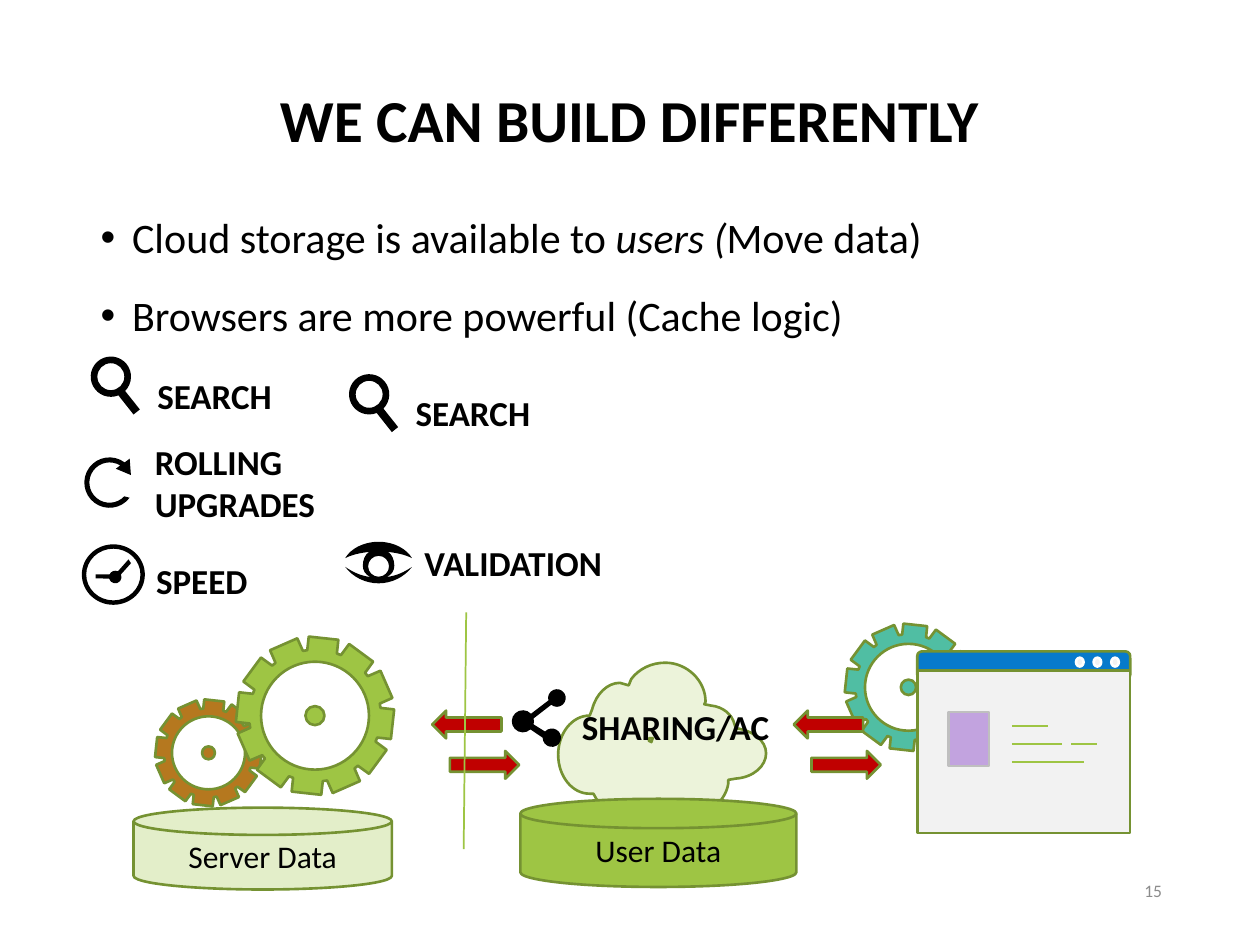
from math import ceil, cos, radians, sin, tan

from lxml import etree
from pptx import Presentation
from pptx import util as u
from pptx.dml.color import RGBColor
from pptx.enum import shapes, text
from pptx.oxml.ns import qn

BLACK = RGBColor(0, 0, 0)
WHITE = RGBColor(255, 255, 255)
GRAY = RGBColor(0x8C, 0x8C, 0x8C)
SILVER = RGBColor(0xBF, 0xBF, 0xBF)
PALE = RGBColor(0xF2, 0xF2, 0xF2)
MOSS = RGBColor(0x75, 0x92, 0x32)
LIME = RGBColor(0x9E, 0xC5, 0x44)
MINT = RGBColor(0xD8, 0xE8, 0xB4)
MIST = RGBColor(0xEC, 0xF3, 0xDA)
TEAL = RGBColor(0x50, 0xBE, 0xA3)
RUST = RGBColor(0xB5, 0x78, 0x1F)
RED = RGBColor(0xC0, 0, 0)
BLUE = RGBColor(0x07, 0x7A, 0xCC)
LILAC = RGBColor(0xC2, 0xA3, 0xDF)

KIND = shapes.MSO_SHAPE
MID = text.MSO_ANCHOR.MIDDLE
MID_X = text.PP_ALIGN.CENTER
COLS, ROWS = 100, 75
WIDE, HIGH = u.Inches(10), u.Inches(7.5)
LABEL = {"size": u.Pt(20), "bold": True}


def col(n):
    """Turn grid columns into a length."""
    return round(n * WIDE / COLS)


def row(n):
    """Turn grid rows into a length."""
    return round(n * HIGH / ROWS)


def cells(x, y, w, h):
    """Turn a grid box into four lengths."""
    return col(x), row(y), col(w), row(h)


def style(item, form):
    """Set each format value on an item."""
    for name, value in form.items():
        setattr(item, name, value)


def paint(shape, fill, line=MOSS):
    """Fill and outline a shape without a shadow."""
    shape.shadow.inherit = False
    shape.fill.solid()
    shape.fill.fore_color.rgb = fill
    if line is None:
        shape.line.fill.background()
    else:
        shape.line.color.rgb = line
        shape.line.width = u.Pt(1.5)
    return shape


def block(slide, kind, box, fill, line=MOSS):
    """Add a preset shape in a grid box."""
    return paint(slide.shapes.add_shape(kind, *cells(*box)), fill, line)


def rule(slide, x1, y1, x2, y2):
    """Draw a thin lime line."""
    line = slide.shapes.add_connector(
        shapes.MSO_CONNECTOR.STRAIGHT, col(x1), row(y1), col(x2), row(y2))
    line.line.color.rgb = LIME
    line.line.width = u.Pt(1)
    etree.SubElement(line.element.spPr, qn("a:effectLst"))


def write(para, words, form, color=BLACK):
    """Add a run of text to a paragraph."""
    run = para.add_run()
    run.text = words
    style(run.font, {"name": "Calibri"} | form)
    run.font.color.rgb = color


def note(slide, box, words, form, color=BLACK, frame=None, para=None):
    """Add a text box with one paragraph."""
    body = slide.shapes.add_textbox(*cells(*box)).text_frame
    style(body, {"word_wrap": True} | (frame or {}))
    style(body.paragraphs[0], para or {})
    write(body.paragraphs[0], words, form, color)


def arc(cx, cy, rx, ry=None, start=0, end=360):
    """Give an arc as a point and curves, in degrees clockwise from the right."""
    ry = rx if ry is None else ry
    count = ceil(abs(end - start) / 90)
    step = radians((end - start) / count)
    pull = 4 / 3 * tan(step / 4)
    parts = [(cx + rx * cos(radians(start)), cy + ry * sin(radians(start)))]
    for i in range(count):
        a = radians(start) + i * step
        b = a + step
        unit = (cos(a) - pull * sin(a), sin(a) + pull * cos(a),
                cos(b) + pull * sin(b), sin(b) - pull * cos(b), cos(b), sin(b))
        parts.append(tuple((cy + ry * n) if k % 2 else (cx + rx * n)
                           for k, n in enumerate(unit)))
    return parts


def flat(parts):
    """List every point of lines (pairs) and cubic curves (sixes)."""
    return [p[k:k + 2] for p in parts for k in range(0, len(p), 2)]


def outline(slide, x, y, loops, fill=BLACK, line=None):
    """Build one freeform from closed loops offset to x, y."""
    pens = [[(col(x + a), row(y + b)) for a, b in flat(loop)] for loop in loops]
    form = slide.shapes.build_freeform(*pens[0][0], scale=1.0)
    form.add_line_segments(pens[0][1:], close=True)
    for pen in pens[1:]:
        form.move_to(*pen[0])
        form.add_line_segments(pen[1:], close=True)
    shape = form.convert_to_shape()
    legs = iter(list(shape.element.iter(qn("a:lnTo"))))
    for part in (p for loop in loops for p in loop[1:]):
        trio = [next(legs) for _ in range(len(part) // 2)]
        if len(trio) == 3:
            bend = etree.Element(qn("a:cubicBezTo"))
            trio[0].addprevious(bend)
            for leg in trio:
                bend.append(leg[0])
                leg.getparent().remove(leg)
    return paint(shape, fill, line)


def gear(slide, cx, cy, size, fill):
    """Draw a twelve-tooth gear and its hub about a centre."""
    rim = []
    for tooth in range(12):
        mid = tooth * 30 - 83.7
        for turn, far in ((-13.1, .83), (-10.8, 1), (10.8, 1), (13.1, .83)):
            t = radians(mid + turn)
            rim.append((size * far * cos(t), size * far * sin(t)))
    outline(slide, cx, cy, [rim, arc(0, 0, size * .68)], fill, MOSS)
    hub = size * .12
    block(slide, KIND.OVAL, (cx - hub, cy - hub, 2 * hub, 2 * hub), fill)


def cloud(slide, x, y):
    """Draw the cloud behind the user data."""
    puff = [
        (0, 7.3), (0, 5.6, 1.1, 4.2, 2.5, 4.2), (2.7, 3.7),
        (3, 2.5, 3.9, 1.6, 4.9, 1.6), (5.6, 1.8),
        (5.8, 1.3), (6.4, .5, 7.4, 0, 8.5, 0),
        (10.2, 0, 11.7, 1.4, 11.7, 3.1), (11.6, 3.3), (12.1, 3.4),
        (13.1, 3.5, 13.8, 4.1, 14, 4.9), (14.1, 5.2),
        (15.5, 5.4, 16.5, 6.2, 16.5, 7.2), (16.5, 8.2, 15.5, 9.1, 14.1, 9.2),
        (13.5, 9.3), (13.5, 9.6), (13.3, 10.9, 12.1, 12, 10.8, 12),
        (10.3, 12, 9.7, 11.8, 9.3, 11.4), (9, 11.2), (8.8, 11.4),
        (8.1, 12, 7.2, 12.3, 6.2, 12.3), (4.6, 12.3, 3.3, 11.5, 2.8, 10.4),
        (2.5, 10.4), (1.1, 10.4, 0, 9, 0, 7.3)]
    speck = [(7.2, 6.2), (7.4, 6.3), (7.5, 6), (7.2, 6)]
    outline(slide, x, y, [speck, puff], MIST, MOSS)


def disk(slide, box, words, fill, alpha=100):
    """Draw a labelled data store."""
    shape = block(slide, KIND.FLOWCHART_MAGNETIC_DISK, box, fill)
    if alpha < 100:
        tint = shape.element.spPr.find(".//" + qn("a:srgbClr"))
        etree.SubElement(tint, qn("a:alpha"), val=str(alpha * 1000))
    body = shape.text_frame
    body.vertical_anchor = MID
    body.paragraphs[0].alignment = MID_X
    write(body.paragraphs[0], words, {"size": u.Pt(18)})


def swap(slide, x, y):
    """Draw a left arrow above a right arrow."""
    for dx, dy, turn in ((0, 0, 180), (1.4, 3.2, 0)):
        block(slide, KIND.RIGHT_ARROW, (x + dx, y + dy, 5.5, 2.2), RED).rotation = turn


def window(slide, x, y):
    """Draw the browser window."""
    block(slide, KIND.ROUNDED_RECTANGLE, (x, y, 16.9, 2.2), BLUE)
    block(slide, KIND.RECTANGLE, (x, y + 1.5, 16.9, 12.9), PALE)
    for i in range(3):
        block(slide, KIND.OVAL, (x + 12.6 + 1.4 * i, y + .5, .6, .7), PALE, WHITE)
    block(slide, KIND.FLOWCHART_PROCESS, (x + 2.5, y + 4.8, 3.2, 4.3), LILAC, SILVER)
    for a, b, dy in ((7.5, 10.4, 5.9), (7.5, 11.5, 7.35), (7.5, 13.2, 8.8), (12.2, 14.3, 7.35)):
        rule(slide, x + a, y + dy, x + b, y + dy)


def icon(slide, x, y, words, box, loops):
    """Draw a black icon with its label box beside it."""
    dx, dy, w, h = box
    note(slide, (x + dx, y + dy, w, h), words, LABEL)
    outline(slide, x, y, loops)


def search(slide, x, y):
    """Draw the magnifier and its label."""
    glass = arc(1.6, 1.6, 1.6, start=68, end=405) + [(3.9, 4.2), (3.4, 4.6)]
    icon(slide, x, y, "SEARCH", (4.3, .9, 12.4, 4.4), [glass, arc(1.6, 1.6, 1.07)])


def renew(slide, x, y):
    """Draw the circling arrow and its label."""
    ring = arc(2, 2.1, 2, start=-53, end=-323) + arc(2, 2.1, 1.6, start=-317, end=-58)
    head = [(2.5, 1), (3.7, 1.5), (3.6, .2)]
    icon(slide, x, y, "ROLLING UPGRADES", (4.6, -1.7, 16.1, 7.7), [ring + head])


def speed(slide, x, y):
    """Draw the dial and its label."""
    hand = ([(3.7, 1.2), (3.9, 1.5)] + arc(2.65, 2.6, .5, start=-25, end=165)
            + [(1.1, 2.7), (1.1, 2.4)] + arc(2.65, 2.6, .5, start=205, end=295))
    icon(slide, x, y, "SPEED", (4.9, .7, 9.9, 4.4),
         [arc(2.5, 2.4, 2.5, 2.4), arc(2.5, 2.4, 2.15, 2.05)])
    outline(slide, x, y, [hand])


def check(slide, x, y):
    """Draw the eye and its label."""
    half = [(2.65, 0), (3.9, 0, 4.9, .6, 5.3, 1.3), (4.7, 1, 4.1, .9, 3.4, .8),
            (3.7, 1, 3.9, 1.4, 3.9, 1.9), (3.9, 2.3, 3.7, 2.6, 3.3, 2.8),
            (4.1, 2.7, 4.7, 2.4, 5.3, 2), (4.7, 2.8, 3.7, 3.3, 2.65, 3.3)]
    back = [(5.3 - a, b) for a, b in reversed(flat(half)[:-1])]
    lids = half + [sum(back[k:k + 3], ()) for k in range(0, len(back), 3)]
    icon(slide, x, y, "VALIDATION", (5.3, -.5, 17.3, 4.4), [lids, arc(2.65, 1.95, .83)])


def share(slide, x, y):
    """Draw the three linked dots and their label."""
    web = (arc(3.6, .7, .7, start=164, end=490) + arc(.9, 2.55, .88, start=-15, end=16)
           + arc(3.2, 3.85, .73, start=222, end=540) + arc(.9, 2.55, .88, start=47, end=317))
    icon(slide, x, y, "SHARING/AC", (4.6, .8, 17.7, 4.4), [web])


def points(slide, box):
    """Write the two bulleted statements."""
    body = slide.shapes.add_textbox(*cells(*box)).text_frame
    body.word_wrap = True
    lines = ((("Cloud storage is available to ", False), ("users (", True), ("Move data)", False)),
             (("Browsers are more powerful (Cache logic)", False),))
    for i, runs in enumerate(lines):
        para = body.add_paragraph() if i else body.paragraphs[0]
        style(para, {"line_spacing": 1.2, "space_before": u.Pt(10)})
        props = para._p.get_or_add_pPr()
        props.set("marL", str(col(2.5)))
        props.set("indent", str(-col(2.5)))
        etree.SubElement(props, qn("a:buFont"), typeface="Arial")
        etree.SubElement(props, qn("a:buChar"), char="•")
        for words, slant in runs:
            write(para, words, {"size": u.Pt(24), "italic": slant})


def main():
    """Build and save the slide."""
    deck = Presentation()
    style(deck, {"slide_width": WIDE, "slide_height": HIGH})
    slide = deck.slides.add_slide(deck.slide_layouts[6])
    note(slide, (7.5, 2.5, 84.9, 14.5), "WE CAN BUILD DIFFERENTLY",
         {"size": u.Pt(34), "bold": True}, frame={"vertical_anchor": MID},
         para={"alignment": MID_X, "line_spacing": .9})
    note(slide, (87, 68.7, 6.2, 4), "15", {"size": u.Pt(10)}, GRAY,
         {"vertical_anchor": MID}, {"alignment": text.PP_ALIGN.RIGHT})
    cloud(slide, 44.3, 52.6)
    gear(slide, 72.1, 54.55, 5.07, TEAL)
    disk(slide, (10.6, 64.1, 20.5, 6.5), "Server Data", MINT, 71)
    disk(slide, (41.3, 63.4, 21.9, 7), "User Data", LIME)
    gear(slide, 16.55, 59.75, 4.26, RUST)
    gear(slide, 25, 56.8, 6.3, LIME)
    for x in (63, 34.3):
        swap(slide, x, 56.4)
    window(slide, 72.8, 51.7)
    points(slide, (7, 15.5, 84.9, 11.8))
    renew(slide, 6.7, 36.2)
    share(slide, 40.6, 54.7)
    check(slide, 27.4, 43)
    search(slide, 27.7, 29.7)
    speed(slide, 6.5, 43.2)
    rule(slide, 37, 48.6, 36.8, 67.4)
    search(slide, 7.2, 28.3)
    deck.save("out.pptx")


if __name__ == "__main__":
    main()
